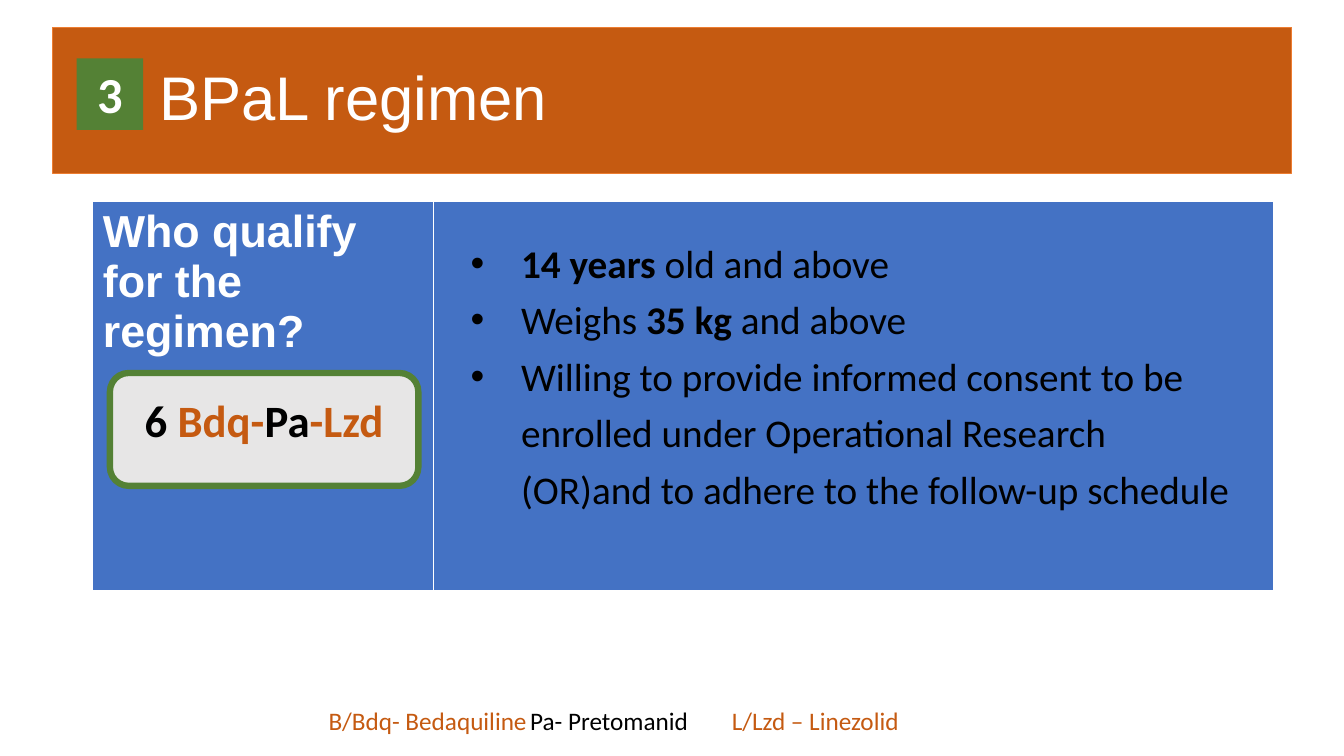
from lxml import etree
from pptx import Presentation
from pptx import util as u
from pptx.dml.color import RGBColor
from pptx.enum import shapes, text
from pptx.oxml.ns import qn

COLORS = {
    "white": "FFFFFF",
    "black": "000000",
    "orange": "C55A11",
    "light_orange": "ED7D31",
    "green": "548135",
    "blue": "4472C4",
    "gray": "E7E6E6",
}
RECTANGLE = shapes.MSO_SHAPE.RECTANGLE
ROUNDED = shapes.MSO_SHAPE.ROUNDED_RECTANGLE
CENTER = text.PP_ALIGN.CENTER
MIDDLE = text.MSO_ANCHOR.MIDDLE


def color(name):
    return RGBColor.from_string(COLORS[name])


def write(frame, paragraphs, size=18, font="Calibri", ink="black", bold=False,
          align=None, anchor=text.MSO_ANCHOR.TOP, spacing=None,
          margin=0, indent=0, bullet=None, tabs=()):
    frame.word_wrap = True
    frame.vertical_anchor = anchor
    for index, runs in enumerate(paragraphs):
        paragraph = frame.add_paragraph() if index else frame.paragraphs[0]
        paragraph.alignment = align
        paragraph.line_spacing = spacing
        properties = paragraph._p.get_or_add_pPr()
        properties.set("marL", str(u.Inches(margin)))
        properties.set("indent", str(u.Inches(indent)))
        if bullet:
            etree.SubElement(properties, qn("a:buFont"), typeface="Arial")
            etree.SubElement(properties, qn("a:buChar"), char=bullet)
        if tabs:
            tab_list = etree.SubElement(properties, qn("a:tabLst"))
            for position in tabs:
                etree.SubElement(tab_list, qn("a:tab"), pos=str(u.Inches(position)), algn="l")
        for words, changes in runs:
            run = paragraph.add_run()
            run.text = words
            run.font.name = font
            run.font.size = u.Pt(size)
            run.font.bold = changes.get("bold", bold)
            run.font.color.rgb = color(changes.get("ink", ink))


class RegimenSlide:
    def __init__(self, presentation):
        self.slide = presentation.slides.add_slide(presentation.slide_layouts[6])

    def box(self, kind, place, paragraphs, fill, line=None, width=0, bottom=0.05, **style):
        shape = self.slide.shapes.add_shape(kind, *map(u.Inches, place))
        shape.shadow.inherit = False
        shape.fill.solid()
        shape.fill.fore_color.rgb = color(fill)
        if line:
            shape.line.color.rgb = color(line)
            shape.line.width = u.Pt(width)
        else:
            shape.line.fill.background()
        shape.text_frame.margin_bottom = u.Inches(bottom)
        write(shape.text_frame, paragraphs, **style)

    def label(self, place, paragraphs, **style):
        shape = self.slide.shapes.add_textbox(*map(u.Inches, place))
        write(shape.text_frame, paragraphs, **style)

    def table(self, place, columns, cells, fill, **style):
        table = self.slide.shapes.add_table(1, len(columns), *map(u.Inches, place)).table
        for column, width in zip(table.columns, columns):
            column.width = u.Inches(width)
        for cell, words in zip(table.rows[0].cells, cells):
            cell.fill.solid()
            cell.fill.fore_color.rgb = color(fill)
            if words:
                write(cell.text_frame, [[(words, {})]], **style)


def main():
    presentation = Presentation()
    presentation.slide_width = u.Inches(13.33)
    presentation.slide_height = u.Inches(7.5)
    regimen = RegimenSlide(presentation)
    orange = {"ink": "orange"}
    strong = {"bold": True}

    regimen.table((0.92, 2, 11.71, 3.86), (3.38, 8.33),
                  ("Who qualify for the regimen?", ""), "blue",
                  size=32, font="Arial", ink="white", bold=True)
    regimen.box(ROUNDED, (1.09, 3.7, 3.06, 1.12),
                [[("6 ", {}), ("Bdq-", orange), ("Pa", {}), ("-Lzd", orange)]],
                "gray", line="green", width=4.5, bottom=0.24,
                size=32, bold=True, align=CENTER, anchor=MIDDLE)
    regimen.label((4.32, 2.23, 7.97, 3.46), [
        [("14 years ", strong), ("old and above", {})],
        [("Weighs ", {}), ("35 kg ", strong), ("and above", {})],
        [("Willing to provide informed consent to be enrolled under Operational "
          "Research (OR)and to adhere to the follow-up schedule", {})],
    ], size=28, spacing=1.2, margin=0.75, indent=-0.5, bullet="•")
    regimen.label((2.44, 6.95, 8.36, 0.4), [
        [("B/Bdq- Bedaquiline\t", orange), ("Pa- Pretomanid\t", {}),
         ("L/Lzd – Linezolid", orange)],
    ], margin=0.72, tabs=(3.31, 5.38))
    regimen.box(RECTANGLE, (0.52, 0.27, 12.29, 1.45), [[("BPaL regimen", {})]],
                "orange", line="light_orange", width=0.75, size=44, font="Arial",
                ink="white", align=text.PP_ALIGN.LEFT, anchor=MIDDLE,
                spacing=0.9, margin=0.96)
    regimen.box(RECTANGLE, (0.76, 0.58, 0.66, 0.71), [[("3", {})]], "green",
                size=36, ink="white", bold=True, align=CENTER)
    presentation.save("out.pptx")


if __name__ == "__main__":
    main()
